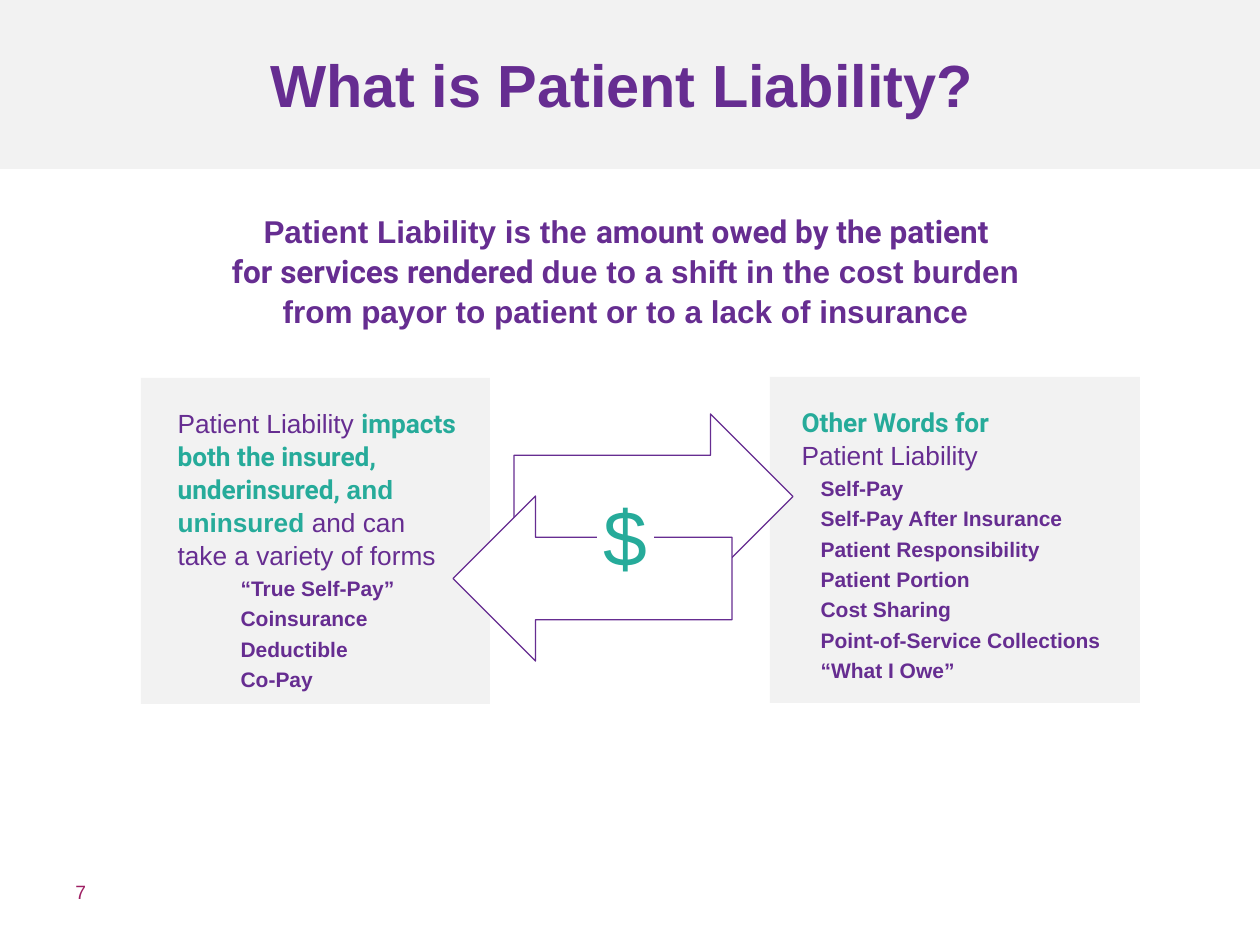
from lxml import etree
from pptx import Presentation
from pptx import util as u
from pptx.dml.color import RGBColor
from pptx.enum import shapes, text
from pptx.oxml.ns import qn

PX = 914400 / 126
PURPLE, TEAL, WINE = "662D91", "26AB9A", "9E1F63"
GREY, WHITE = "F2F2F2", "FFFFFF"
TOP, MIDDLE, BOTTOM = (text.MSO_ANCHOR.TOP, text.MSO_ANCHOR.MIDDLE,
                       text.MSO_ANCHOR.BOTTOM)
LEFT, CENTER = text.PP_ALIGN.LEFT, text.PP_ALIGN.CENTER


def px(value):
    return u.Emu(round(value * PX))


def color(hex_string):
    return RGBColor.from_string(hex_string)


class Deck:
    """Holds the style and the current slide."""

    def __init__(self):
        self.presentation = Presentation()
        self.presentation.slide_width = px(1260)
        self.presentation.slide_height = px(945)
        layout = self.presentation.slide_layouts.get_by_name("Two Content")
        self.slide = self.presentation.slides.add_slide(layout)

    def set_font(self, font, size, fill=PURPLE, bold=False, name="Arial"):
        font.size, font.bold, font.name = u.Pt(size), bold, name
        font.color.rgb = color(fill)

    def frame(self, shape, anchor):
        frame = shape.text_frame
        frame.word_wrap = True
        frame.auto_size = text.MSO_AUTO_SIZE.NONE
        frame.vertical_anchor = anchor
        return frame

    def shape(self, kind, box, fill, line=None, rotation=0, parent=None):
        shape = (parent or self.slide).shapes.add_shape(kind, *map(px, box))
        shape.shadow.inherit = False
        shape.rotation = rotation
        shape.fill.solid()
        shape.fill.fore_color.rgb = color(fill)
        if line:
            shape.line.color.rgb = color(line)
            shape.line.width = u.Pt(0.75)
        else:
            shape.line.fill.background()
        return shape

    def placeholder(self, index, box, anchor=TOP):
        """Moves a placeholder and brings it in front of the panels."""
        shape = self.slide.placeholders[index]
        shape.left, shape.top, shape.width, shape.height = map(px, box)
        self.slide.shapes._spTree.append(shape._element)
        return self.frame(shape, anchor)

    def textbox(self, box, anchor=TOP):
        return self.frame(self.slide.shapes.add_textbox(*map(px, box)), anchor)

    def paragraph(self, frame, content, size, align=LEFT, indent=0, before=0,
                  spacing=1.05, **style):
        """Content is a string, or a list of (text, style) runs."""
        paragraph = frame.paragraphs[0]
        if paragraph.runs:
            paragraph = frame.add_paragraph()
        paragraph.alignment = align
        paragraph.line_spacing = spacing
        paragraph.space_before, paragraph.space_after = u.Pt(before), u.Pt(0)
        properties = paragraph._p.get_or_add_pPr()
        properties.set("marL", str(px(indent)))
        properties.set("indent", "0")
        etree.SubElement(properties, qn("a:buNone"))
        if isinstance(content, str):
            paragraph.add_run().text = content
            self.set_font(paragraph.font, size, **style)
            return
        for words, run_style in content:
            for number, part in enumerate(words.split("\n")):
                if number:
                    paragraph.add_line_break()
                run = paragraph.add_run()
                run.text = part
                self.set_font(run.font, size, **run_style)

    def items(self, frame, names, indent):
        for name in names:
            self.paragraph(frame, name, 12, indent=indent, before=2.2, bold=True)


def main():
    deck = Deck()
    kinds = shapes.MSO_SHAPE
    bold = {"bold": True}
    strong = {"bold": True, "name": "Roboto"}
    accent = {**strong, "fill": TEAL}

    # Title band and panels
    band = (0, -1, 1260, 170)
    for box in (band, (770, 377, 370, 326), (141, 378, 349, 326)):
        deck.shape(kinds.RECTANGLE, box, GREY)
    title = deck.placeholder(0, band, MIDDLE)
    deck.paragraph(title, "What is Patient Liability? ", 34, CENTER,
                   spacing=1.0, bold=True)

    # Opposing arrows around the dollar sign
    group = deck.slide.shapes.add_group_shape()
    for left, top, rotation in ((514, 414, 0), (453, 496, 180)):
        deck.shape(kinds.RIGHT_ARROW, (left, top, 279, 165), WHITE, PURPLE,
                   rotation, group)
    dollar = deck.shape(kinds.RECTANGLE, (597, 481, 57, 108), WHITE, parent=group)
    dollar_frame = deck.frame(dollar, MIDDLE)
    dollar_frame.margin_left = dollar_frame.margin_right = 0
    deck.paragraph(dollar_frame, "$", 45, CENTER, spacing=1.0, fill=TEAL)

    # Left panel: who is affected
    impact = deck.placeholder(1, (165, 399, 326, 312))
    deck.paragraph(impact, [
        ("Patient Liability ", {}),
        ("impacts \nboth the insured, underinsured, ", accent),
        ("and uninsured ", {"bold": True, "fill": TEAL}),
        ("and can \ntake a variety of forms", {}),
    ], 15)
    deck.items(impact, ["“True Self-Pay”", "Coinsurance", "Deductible",
                        "Co-Pay"], 63)

    # Right panel: synonyms
    synonyms = deck.placeholder(2, (789, 398, 352, 359))
    deck.paragraph(synonyms, "Other Words for", 15, **accent)
    deck.paragraph(synonyms, "Patient Liability", 15)
    deck.items(synonyms, [
        "Self-Pay", "Self-Pay After Insurance", "Patient Responsibility",
        "Patient Portion", "Cost Sharing", "Point-of-Service Collections",
        "“What I Owe”"], 19)

    # Definition
    definition = deck.textbox((23, 219, 1214, 102), MIDDLE)
    deck.paragraph(definition, [
        ("Patient Liability is the ", bold),
        ("amount owed by the patient \nfor services rendered ", strong),
        ("due to a shift in the cost burden \n"
         "from payor to patient or to a lack of insurance ", bold),
    ], 18, CENTER)

    # Page number
    number = deck.textbox((63, 882, 79, 28), BOTTOM)
    deck.paragraph(number, "7", 11, spacing=1.0, fill=WINE)

    deck.presentation.save("out.pptx")


if __name__ == "__main__":
    main()
